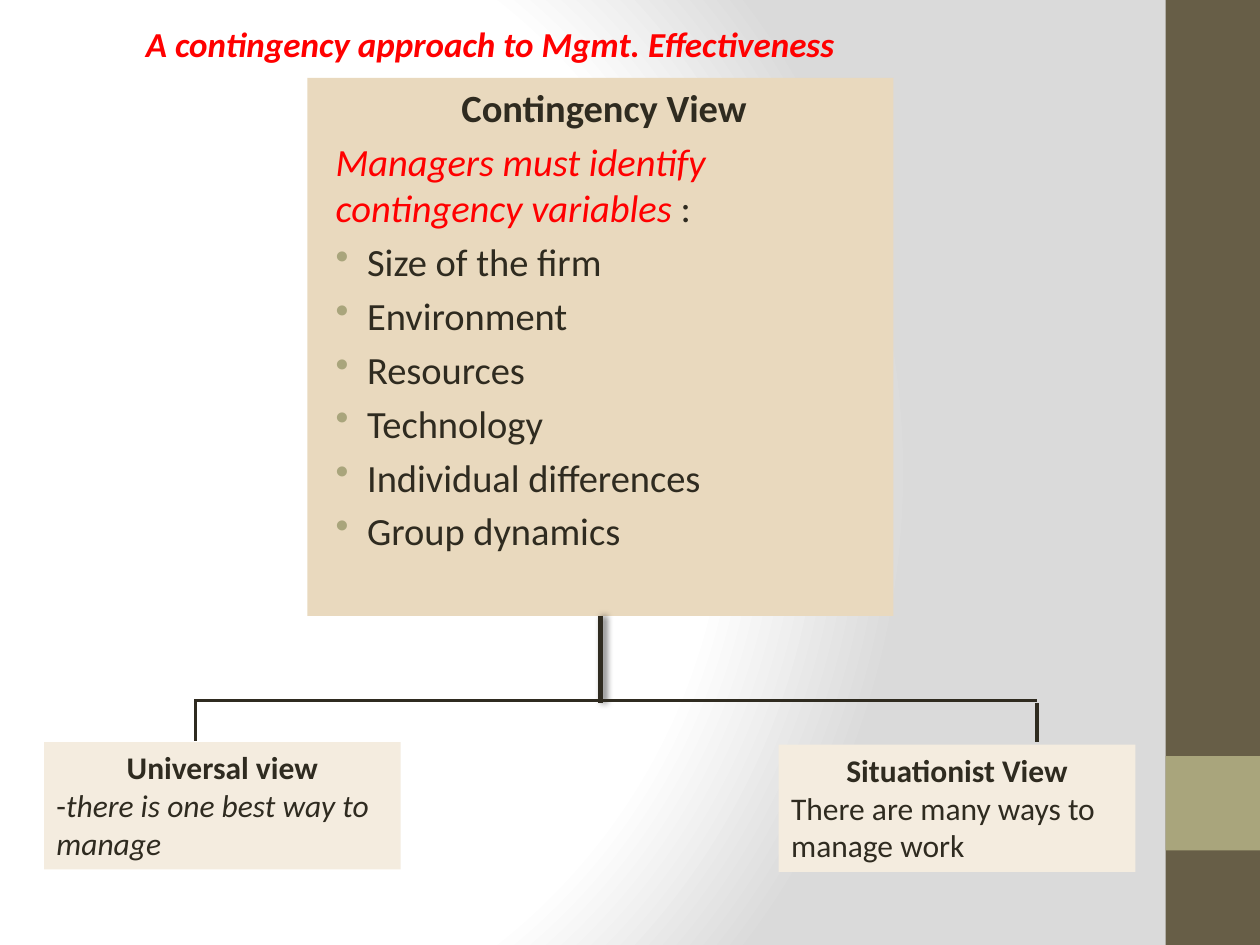
import pptx
import pptx.util
import pptx.oxml
import pptx.oxml.ns
import pptx.dml.color
import pptx.enum.shapes
import pptx.enum.text

Pt = pptx.util.Pt
RECT = pptx.enum.shapes.MSO_SHAPE.RECTANGLE
LINE = pptx.enum.shapes.MSO_CONNECTOR.STRAIGHT
ALIGN = pptx.enum.text.PP_ALIGN
GROW = pptx.enum.text.MSO_AUTO_SIZE.SHAPE_TO_FIT_TEXT
NS = pptx.oxml.ns.nsdecls("a")
DARK, RED, OLIVE = "2F2B20", "FF0000", "A9A57C"

deck = pptx.Presentation()
deck.slide_width, deck.slide_height = Pt(720), Pt(540)
slide = deck.slides.add_slide(deck.slide_layouts[6])


def paint(target, color):
    """Give a fill, line or font its solid colour."""
    if hasattr(target, "solid"):
        target.solid()
        target.fore_color.rgb = pptx.dml.color.RGBColor.from_string(color)
    else:
        target.color.rgb = pptx.dml.color.RGBColor.from_string(color)


def write(para, parts, size, center=False):
    """Fill a paragraph with (text, colour, bold, italic) runs."""
    para.alignment = ALIGN.CENTER if center else ALIGN.LEFT
    for text, color, bold, slant in parts:
        run = para.add_run()
        run.text = text
        font = run.font
        font.name, font.size = "Calibri", Pt(size)
        font.bold, font.italic = bold, slant
        paint(font, color)


# Background: white glow fading to grey
slide.background.fill.gradient()
grad = slide.element.find(".//" + pptx.oxml.ns.qn("a:gradFill"))
stops = "".join(
    f'<a:gs pos="{pos}"><a:srgbClr val="{color}"/></a:gs>'
    for pos, color in [(0, "FFFFFF"), (75000, "FFFFFF"), (100000, "DADADA")])
grad.getparent().replace(grad, pptx.oxml.parse_xml(
    f'<a:gradFill {NS} rotWithShape="1"><a:gsLst>{stops}</a:gsLst><a:path path="circle">'
    '<a:fillToRect l="20000" t="50000" r="100000" b="50000"/></a:path></a:gradFill>'))

# Side band, then the three panels
panels = []
for left, top, width, height, color in [
        (666, 0, 54, 540, "675E47"), (666, 432, 54, 54, OLIVE),
        (175.7, 44.6, 334.8, 307.4, "E9D9BE"),
        (25.2, 424.1, 203.8, 72.7, "F4ECDF"),
        (445, 425.5, 203.8, 72.7, "F4ECDF")]:
    panel = slide.shapes.add_shape(RECT, Pt(left), Pt(top), Pt(width), Pt(height))
    panel.shadow.inherit = False
    paint(panel.fill, color)
    panel.line.fill.background()
    panel.text_frame.word_wrap = True
    panel.text_frame.vertical_anchor = pptx.enum.text.MSO_ANCHOR.TOP
    panels.append(panel)
body, left_box, right_box = panels[2:]

# Main panel text
items = ["Size of the firm", "Environment", "Resources", "Technology",
         "Individual differences", "Group dynamics"]
rows = [[("Contingency View ", DARK, True, False)],
        [("Managers must identify contingency variables ", RED, False, True),
         (":", DARK, False, False)]]
rows += [[(item, DARK, False, False)] for item in items]
frame = body.text_frame
for i, parts in enumerate(rows):
    para = frame.paragraphs[0] if i == 0 else frame.add_paragraph()
    write(para, parts, 22, center=i == 0)
    para.space_before = Pt(4.4)
    props = para._p.get_or_add_pPr()
    listed = i > 1
    props.set("marL", str(Pt(27 if listed else 9)))
    props.set("indent", str(Pt(-18 if listed else 0)))
    if listed:
        props.append(pptx.oxml.parse_xml(
            f'<a:buClr {NS}><a:srgbClr val="{OLIVE}"/></a:buClr>'))
        props.append(pptx.oxml.parse_xml(f'<a:buChar {NS} char="•"/>'))

# The two views
for box, head, parts in [
        (left_box, "Universal view",
         [("-", DARK, False, False),
          ("there is one best way to manage", DARK, False, True)]),
        (right_box, "Situationist View",
         [("There are many ways to manage work", DARK, False, False)])]:
    box.text_frame.auto_size = GROW
    write(box.text_frame.paragraphs[0], [(head, DARK, True, False)], 18, center=True)
    write(box.text_frame.add_paragraph(), parts, 18)

# Tree lines: trunk, bar and two drops
shade = (f'<a:outerShdw blurRad="{Pt(4)}" dist="{Pt(2)}" dir="0" algn="l" rotWithShape="0">'
         '<a:srgbClr val="000000"><a:alpha val="60000"/></a:srgbClr></a:outerShdw>')
for x1, y1, x2, y2, width, effect in [
        (343.1, 352, 343.1, 401.8, 3, shade),
        (592.6, 400.3, 110.9, 400.3, 2, ""),
        (111.6, 400.3, 111.6, 423.4, 2, ""),
        (592.6, 401.8, 592.6, 424.1, 2, "")]:
    line = slide.shapes.add_connector(LINE, Pt(x1), Pt(y1), Pt(x2), Pt(y2))
    line.line.width = Pt(width)
    paint(line.line, DARK)
    line._element.spPr.append(
        pptx.oxml.parse_xml(f"<a:effectLst {NS}>{effect}</a:effectLst>"))
    if effect:
        line.begin_connect(body, 2)

# Title
title = slide.shapes.add_textbox(Pt(76.3), Pt(9.4), Pt(516.2), Pt(31.5))
title.text_frame.word_wrap = True
title.text_frame.auto_size = GROW
write(title.text_frame.paragraphs[0],
      [("A contingency approach to Mgmt. Effectiveness", RED, True, True)], 20)

deck.save("out.pptx")
